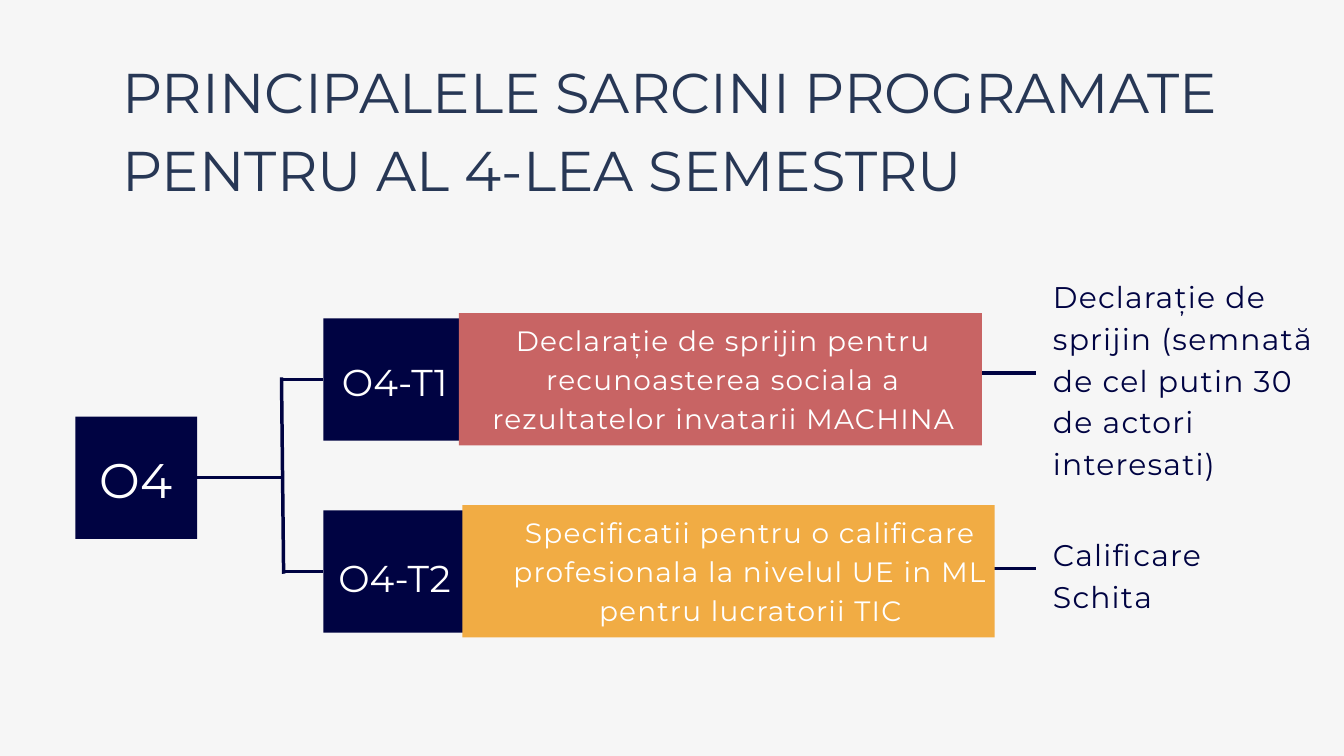
import pptx
import pptx.dml.color
import pptx.enum.shapes
import pptx.enum.text
import pptx.oxml.ns
import pptx.util
from lxml import etree
from pptx.util import Cm

RGBColor = pptx.dml.color.RGBColor
BACKGROUND = RGBColor(0xF6, 0xF6, 0xF6)
NAVY = RGBColor(0x00, 0x03, 0x42)
SLATE = RGBColor(0x27, 0x37, 0x55)
RED = RGBColor(0xC8, 0x64, 0x64)
AMBER = RGBColor(0xF1, 0xAC, 0x44)
WHITE = RGBColor(0xFF, 0xFF, 0xFF)

LEFT = pptx.enum.text.PP_ALIGN.LEFT
CENTER = pptx.enum.text.PP_ALIGN.CENTER
LINE_RATIO = 1.4
ROW_TOP = 12.04
ROW_STEP = 7.26
BOX_HEIGHT = 4.62
TASK_LEFT = 12.22
RESULT_LEFT = 39.8

TASKS = [
    {"code": "O4-T1", "code_box": (12.88, 13.31, 4.09, 1.88), "code_width": 5.13,
     "color": RED, "panel_left": 17.35, "panel_width": 19.76,
     "text": "Declarație de sprijin pentru recunoasterea sociala a rezultatelor invatarii MACHINA",
     "text_box": (18.14, 12.01, 18.42, 4.42),
     "result": ["Declarație de sprijin (semnată de cel putin 30 de actori interesati)"],
     "result_top": 10.31, "result_height": 8.03, "result_line": 14.1, "spine_x": 10.64},
    {"code": "O4-T2", "code_box": (12.73, 20.7, 4.37, 1.88), "code_width": 5.38,
     "color": AMBER, "panel_left": 17.48, "panel_width": 20.12,
     "text": "Specificatii pentru o calificare profesionala la nivelul UE in ML pentru lucratorii TIC",
     "text_box": (17.6, 19.28, 21.54, 4.5),
     "result": ["Calificare", "Schita"],
     "result_top": 20.07, "result_height": 3.05, "result_line": 21.49, "spine_x": 10.72},
]


def set_attributes(target, values):
    """Set each named attribute of the target."""
    for name, value in values.items():
        setattr(target, name, value)


def add_box(slide, left, top, width, height, color):
    """Add a plain filled rectangle."""
    shape = slide.shapes.add_shape(
        pptx.enum.shapes.MSO_SHAPE.RECTANGLE, Cm(left), Cm(top), Cm(width), Cm(height))
    shape.shadow.inherit = False
    shape.fill.solid()
    shape.fill.fore_color.rgb = color
    shape.line.fill.background()
    return shape


def add_text(slide, box, lines, size, color, alignment=LEFT, tracking=0):
    """Add a wrapping text box with one paragraph per line."""
    frame = slide.shapes.add_textbox(*(Cm(length) for length in box)).text_frame
    set_attributes(frame, {
        "word_wrap": True, "auto_size": pptx.enum.text.MSO_AUTO_SIZE.SHAPE_TO_FIT_TEXT,
        "margin_left": 0, "margin_top": 0, "margin_right": 0, "margin_bottom": 0})
    frame.text = "\n".join(lines)
    for paragraph in frame.paragraphs:
        set_attributes(paragraph, {
            "alignment": alignment, "line_spacing": pptx.util.Pt(size * LINE_RATIO)})
        for run in paragraph.runs:
            set_attributes(run.font, {"name": "Montserrat", "size": pptx.util.Pt(size)})
            run.font.color.rgb = color
            if tracking:
                run._r.get_or_add_rPr().set("spc", str(tracking))


def add_line(slide, start, end):
    """Add a straight navy connector without a shadow."""
    connector = slide.shapes.add_connector(
        pptx.enum.shapes.MSO_CONNECTOR.STRAIGHT, *(Cm(length) for length in (*start, *end)))
    connector.line.color.rgb = NAVY
    connector.line.width = pptx.util.Pt(3.75)
    etree.SubElement(connector._element.spPr, pptx.oxml.ns.qn("a:effectLst"))
    return connector


def add_task(slide, task, row_top):
    """Add a task row with its branch, code, description and result."""
    add_line(slide, (36.07, task["result_line"]), (39.14, task["result_line"]))
    code_box = add_box(slide, TASK_LEFT, row_top, task["code_width"], BOX_HEIGHT, NAVY)
    add_box(slide, task["panel_left"], row_top - 0.2, task["panel_width"], 5, task["color"])
    middle = row_top + BOX_HEIGHT / 2
    branch = add_line(slide, (task["spine_x"], middle), (TASK_LEFT, middle))
    branch.end_connect(code_box, 1)
    add_text(slide, task["code_box"], [task["code"]], 40, WHITE, CENTER)
    add_text(slide, task["text_box"], [task["text"]], 30, WHITE, CENTER, 130)
    result_box = (RESULT_LEFT, task["result_top"], 10.49, task["result_height"])
    add_text(slide, result_box, task["result"], 32, NAVY, LEFT, 130)


def main():
    """Build the slide and save it."""
    presentation = pptx.Presentation()
    set_attributes(presentation, {"slide_width": Cm(50.8), "slide_height": Cm(28.58)})
    slide = presentation.slides.add_slide(presentation.slide_layouts[6])
    slide.background.fill.solid()
    slide.background.fill.fore_color.rgb = BACKGROUND

    add_text(slide, (4.62, 1.75, 43.33, 5.74),
             ["PRINCIPALELE SARCINI PROGRAMATE PENTRU AL 4-LEA SEMESTRU"], 60, SLATE)
    for index, task in enumerate(TASKS):
        add_task(slide, task, ROW_TOP + index * ROW_STEP)

    add_line(slide, (10.64, 14.27), (10.72, 21.69))
    output_box = add_box(slide, 2.85, 15.75, 4.6, BOX_HEIGHT, NAVY)
    trunk = add_line(slide, (7.45, 18.06), (10.64, 18.06))
    trunk.begin_connect(output_box, 3)
    add_text(slide, (3.76, 16.66, 2.79, 2.44), ["O4"], 52, WHITE, CENTER)
    presentation.save("out.pptx")


if __name__ == "__main__":
    main()
